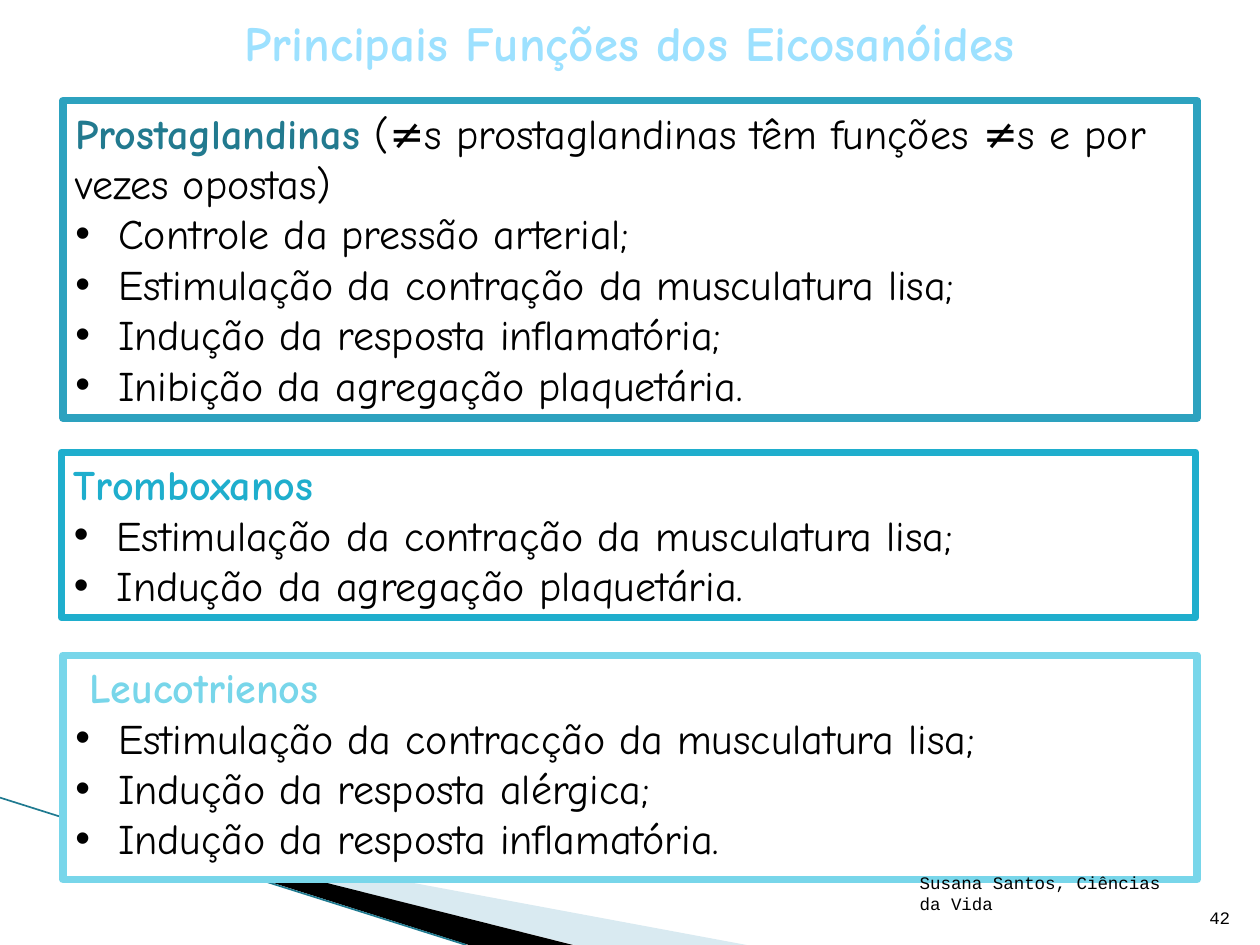
import dataclasses

import pptx
import pptx.dml.color
import pptx.enum.shapes
import pptx.enum.text
import pptx.oxml.ns
import pptx.util
from lxml import etree

Cm = pptx.util.Cm
Pt = pptx.util.Pt
ALIGN = pptx.enum.text.PP_ALIGN
ANCHOR = pptx.enum.text.MSO_ANCHOR
qn = pptx.oxml.ns.qn


@dataclasses.dataclass(frozen=True)
class Theme:
    heading_font: str = "Comic Neue"
    footer_font: str = "Courier New"
    title_size: int = 28
    body_size: int = 24
    footer_size: int = 10
    border: float = 4.33
    black: str = "000000"
    white: str = "FFFFFF"
    title: str = "9DE1FF"
    prostaglandin_text: str = "227A8F"
    prostaglandin: str = "2DA2BF"
    thromboxane: str = "1FAECD"
    leukotriene: str = "78D6EA"
    pale_wedge: str = "D9EAF1"
    wedge_line: str = "1F7A90"


THEME = Theme()


def color(value):
    return pptx.dml.color.RGBColor.from_string(value)


def write(para, text, font=THEME.heading_font, size=THEME.body_size,
          fill=THEME.black, bold=False, align=ALIGN.LEFT):
    para.alignment = align
    para.space_before = Pt(0)
    span = para.add_run()
    span.text = text
    span.font.name = font
    span.font.size = Pt(size)
    span.font.bold = bold
    span.font.color.rgb = color(fill)


def set_bullet(para, symbol=None, left=0, hanging=0):
    properties = para._p.get_or_add_pPr()
    properties.set("marL", str(Cm(left)))
    properties.set("indent", str(-Cm(hanging)))
    if symbol:
        etree.SubElement(properties, qn("a:buFont")).set("typeface", "Arial")
        etree.SubElement(properties, qn("a:buChar")).set("char", symbol)
    else:
        etree.SubElement(properties, qn("a:buNone"))


def place(box, left, top, width, height, anchor=ANCHOR.TOP):
    box.left, box.top, box.width, box.height = map(Cm, (left, top, width, height))
    frame = box.text_frame
    frame.word_wrap = True
    frame.auto_size = pptx.enum.text.MSO_AUTO_SIZE.NONE
    frame.vertical_anchor = anchor
    frame.margin_left = frame.margin_right = Cm(0.25)
    frame.margin_top = frame.margin_bottom = Cm(0.13)
    return frame


def fill_title(page, text):
    frame = place(page.shapes.title, 0.84, 0.13, 23.7, 1.45)
    write(frame.paragraphs[0], text, size=THEME.title_size, fill=THEME.title,
          bold=True, align=ALIGN.CENTER)


def fill_panel(box, bounds, border, heading, items, heading_fill=None, remark="", left=0):
    frame = place(box, *bounds)
    box.fill.solid()
    box.fill.fore_color.rgb = color(THEME.white)
    box.line.color.rgb = color(border)
    box.line.width = Pt(THEME.border)
    para = frame.paragraphs[0]
    set_bullet(para, left=left)
    write(para, heading, fill=heading_fill or border, bold=True)
    if remark:
        write(para, remark)
    for item in items:
        para = frame.add_paragraph()
        set_bullet(para, "•", left=0.86, hanging=0.86)
        write(para, item)


def add_wedge(page, points, fill):
    start, *others = [(Cm(x), Cm(y)) for x, y in points]
    builder = page.shapes.build_freeform(*start)
    builder.add_line_segments(others, close=True)
    wedge = builder.convert_to_shape()
    wedge.shadow.inherit = False
    wedge.fill.solid()
    wedge.fill.fore_color.rgb = color(fill)
    wedge.line.fill.background()
    return wedge


def add_line(page, start, end):
    line = page.shapes.add_connector(pptx.enum.shapes.MSO_CONNECTOR.STRAIGHT,
                                     *map(Cm, start + end))
    line.line.color.rgb = color(THEME.wedge_line)
    line.line.width = Pt(0.95)
    etree.SubElement(line._element.spPr, qn("a:effectLst"))
    return line


def add_backdrop(page):
    parts = [
        add_wedge(page, [(1.4, 16.51), (15.05, 19.05), (11.58, 19.05)], THEME.pale_wedge),
        add_wedge(page, [(1.35, 16.48), (11.55, 19.05), (9.45, 19.05)], THEME.black),
        add_line(page, (0, 16.08), (9.4, 19.05)),
    ]
    for position, part in enumerate(parts, start=2):
        page.shapes.element.insert(position, part._element)


def add_footer(page, text, bounds, align=ALIGN.LEFT):
    box = page.shapes.add_textbox(0, 0, 0, 0)
    frame = place(box, *bounds, anchor=ANCHOR.BOTTOM)
    write(frame.paragraphs[0], text, font=THEME.footer_font,
          size=THEME.footer_size, align=align)


def main():
    deck = pptx.Presentation()
    deck.slide_width, deck.slide_height = Cm(25.4), Cm(19.05)
    page = deck.slides.add_slide(deck.slide_layouts.get_by_name("Comparison"))
    first, second, third, spare = list(page.placeholders)[1:]
    spare._element.getparent().remove(spare._element)

    add_backdrop(page)
    fill_title(page, "Principais Funções dos Eicosanóides")
    fill_panel(first, (1.27, 2.03, 22.86, 6.4), THEME.prostaglandin, "Prostaglandinas ", [
        "Controle da pressão arterial;",
        "Estimulação da contração da musculatura lisa;",
        "Indução da resposta inflamatória;",
        "Inibição da agregação plaquetária.",
    ], heading_fill=THEME.prostaglandin_text,
        remark="(≠s prostaglandinas têm funções ≠s e por vezes opostas)")
    fill_panel(second, (1.24, 9.12, 22.86, 3.33), THEME.thromboxane, "Tromboxanos", [
        "Estimulação da contração da musculatura lisa;",
        "Indução da agregação plaquetária.",
    ])
    fill_panel(third, (1.27, 13.21, 22.86, 4.52), THEME.leukotriene, "Leucotrienos", [
        "Estimulação da contracção da musculatura lisa;",
        "Indução da resposta alérgica;",
        "Indução da resposta inflamatória.",
    ], left=0.28)
    add_footer(page, "42", (24.03, 17.81, 1.02, 1.02), ALIGN.RIGHT)
    add_footer(page, "Susana Santos, Ciências da Vida", (18.29, 17.53, 5.92, 1.02))
    deck.save("out.pptx")


if __name__ == "__main__":
    main()
